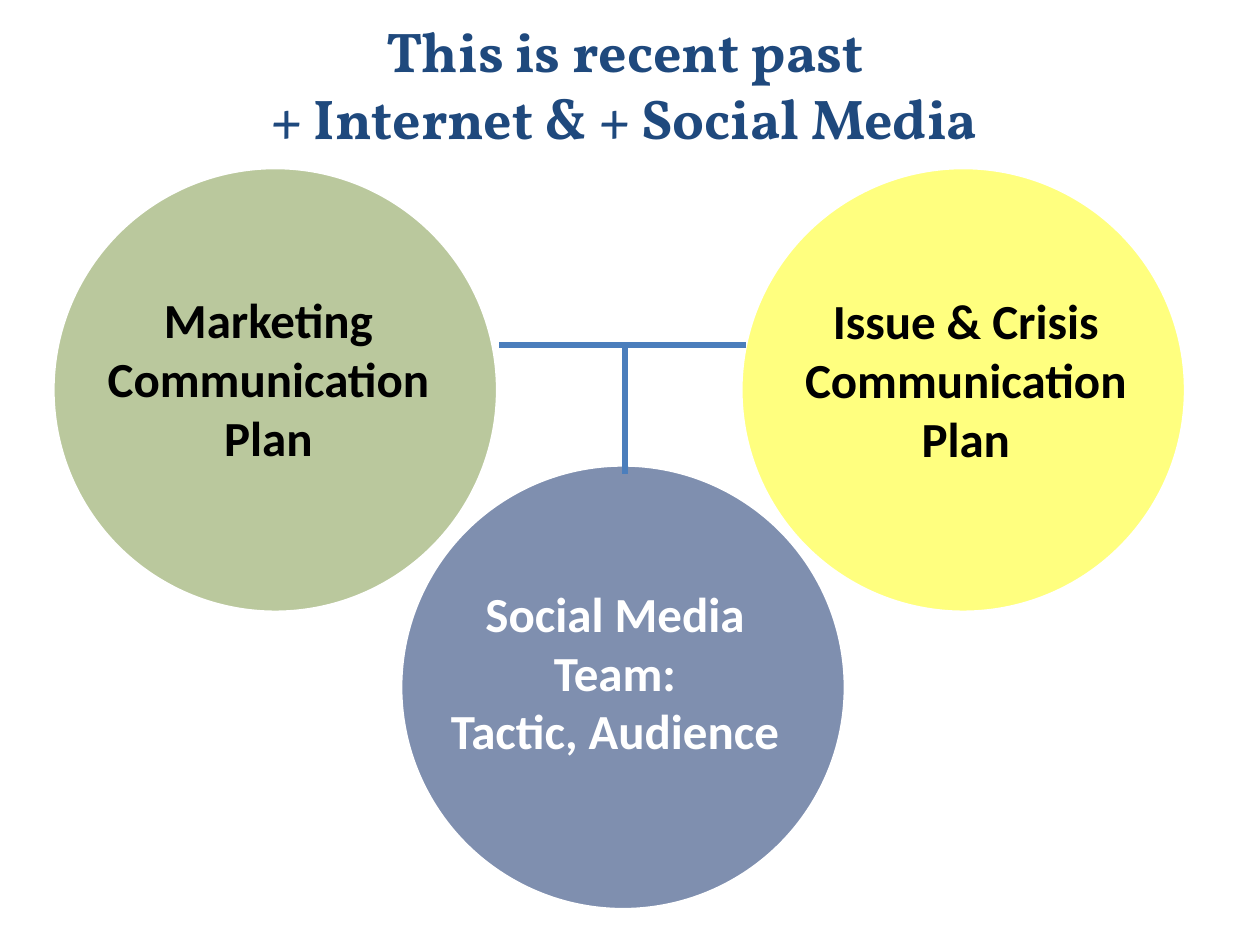
from lxml.etree import SubElement
from pptx import Presentation
from pptx.dml.color import RGBColor
from pptx.enum.shapes import MSO_CONNECTOR, MSO_SHAPE
from pptx.enum.text import MSO_ANCHOR, PP_ALIGN
from pptx.oxml.ns import qn
from pptx.util import Inches, Pt

NAVY = RGBColor(0x1F, 0x49, 0x7D)
BLUE = RGBColor(0x00, 0x20, 0x60)
YELLOW = RGBColor(0xFF, 0xFF, 0x00)
GREEN = RGBColor(0x77, 0x93, 0x3C)
LINK = RGBColor(0x4B, 0x7E, 0xBC)
BLACK = RGBColor(0x00, 0x00, 0x00)
WHITE = RGBColor(0xFF, 0xFF, 0xFF)

prs = Presentation()
prs.slide_width, prs.slide_height = Inches(10), Inches(7.5)
slide = prs.slides.add_slide(prs.slide_layouts[6])


def add_text(text, left, top, width, height, color=BLACK, size=28,
             font="Calibri", anchor=MSO_ANCHOR.TOP):
    """Add centred bold text; \\n starts a paragraph, \\v breaks a line."""
    box = slide.shapes.add_textbox(
        Inches(left), Inches(top), Inches(width), Inches(height))
    frame = box.text_frame
    frame.word_wrap = True
    frame.vertical_anchor = anchor
    frame.text = text
    for paragraph in frame.paragraphs:
        paragraph.alignment = PP_ALIGN.CENTER
        for run in paragraph.runs:
            run.font.name = font
            run.font.size = Pt(size)
            run.font.bold = True
            run.font.color.rgb = color


add_text("This is recent past\v+ Internet & + Social Media",
         0.46, 0.04, 9, 1.25, color=NAVY, size=32, font="Vollkorn",
         anchor=MSO_ANCHOR.MIDDLE)

# Three equal, half-transparent circles: two above, one below between them
diameter = Inches(3.53)
upper_row, lower_row = 1.33, 3.69
for left, top, color in [(3.18, lower_row, BLUE),
                         (5.88, upper_row, YELLOW),
                         (0.42, upper_row, GREEN)]:
    circle = slide.shapes.add_shape(
        MSO_SHAPE.OVAL, Inches(left), Inches(top), diameter, diameter)
    circle.shadow.inherit = False
    circle.fill.solid()
    circle.fill.fore_color.rgb = color
    tint = circle.fill._xPr.find(qn("a:solidFill"))[0]
    SubElement(tint, qn("a:alpha"), val="50000")
    circle.line.color.rgb = WHITE
    circle.line.width = Pt(2)

add_text("Marketing Communication Plan", 0.67, 2.25, 2.92, 1.51)
add_text("Issue & Crisis Communication\nPlan", 6.25, 2.26, 2.83, 1.51)
add_text("Social Media Team:\nTactic, Audience", 3.42, 4.58, 2.92, 1.51,
         color=WHITE)

# One branch from the junction towards each circle
junction_x, junction_y = 4.96, 2.74
for end_x, end_y in [(junction_x, 3.76), (3.96, junction_y), (5.92, junction_y)]:
    branch = slide.shapes.add_connector(
        MSO_CONNECTOR.STRAIGHT, Inches(junction_x), Inches(junction_y),
        Inches(end_x), Inches(end_y))
    branch.line.color.rgb = LINK
    branch.line.width = Pt(3.5)
    SubElement(branch._element.spPr, qn("a:effectLst"))

prs.save("out.pptx")
